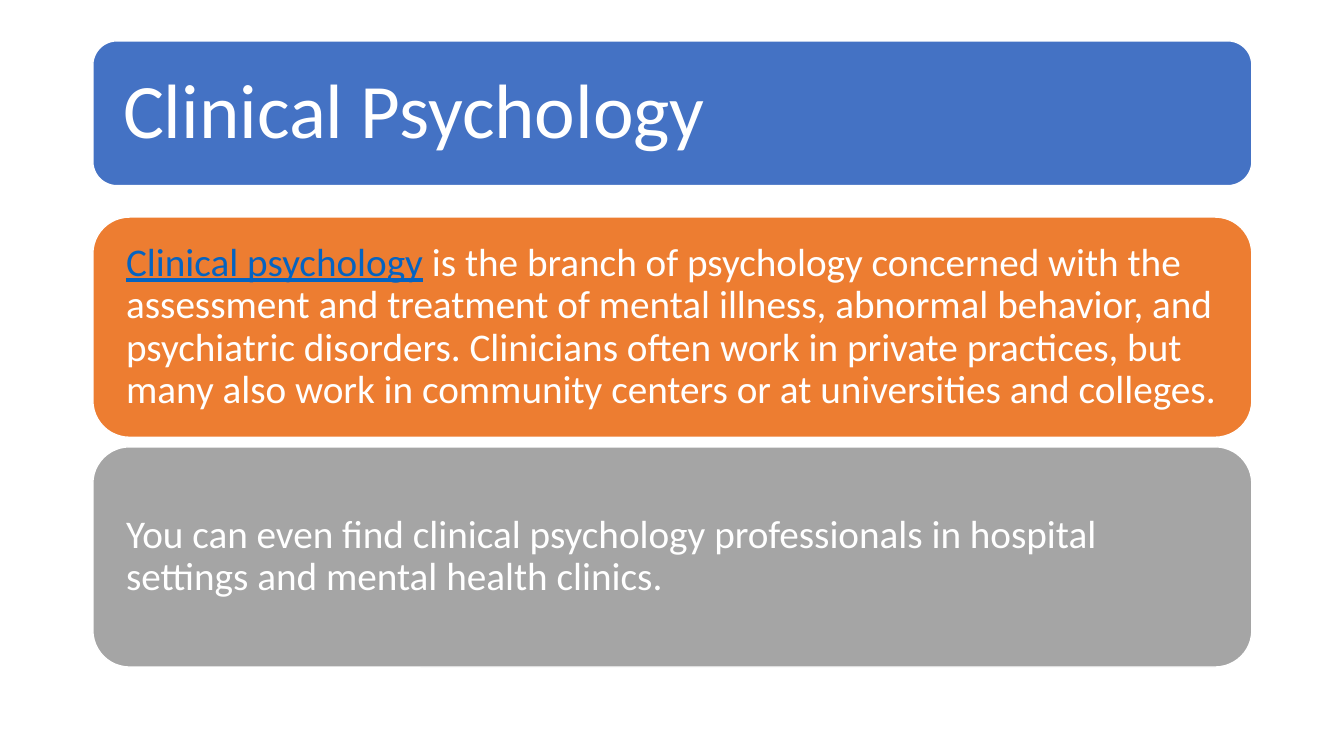
from pptx import Presentation
from pptx.dml.color import RGBColor
from pptx.enum.shapes import MSO_SHAPE
from pptx.enum.text import MSO_ANCHOR, MSO_AUTO_SIZE, PP_ALIGN
from pptx.util import Cm, Pt

ROUNDED = MSO_SHAPE.ROUNDED_RECTANGLE
MIDDLE = MSO_ANCHOR.MIDDLE
LEFT = PP_ALIGN.LEFT
NO_FIT = MSO_AUTO_SIZE.NONE

FONT = "Calibri"
WHITE = "FFFFFF"
LINK = "0563C1"
TITLE = "Clinical Psychology"
TITLE_FILL = "4472C4"
CARDS = [
    ("ED7D31", [
        ("Clinical psychology", LINK),
        (" is the branch of psychology concerned with the assessment and "
         "treatment of mental illness, abnormal behavior, and psychiatric "
         "disorders. Clinicians often work in private practices, but many also "
         "work in community centers or at universities and colleges.", WHITE),
    ]),
    ("A5A5A5", [
        ("You can even find clinical psychology professionals in hospital "
         "settings and mental health clinics.", WHITE),
    ]),
]

SIDE, WIDTH = 2.34, 29.21
TITLE_TOP, TITLE_HEIGHT = 1.03, 3.65
CARDS_TOP, CARD_HEIGHT, CARD_GAP = 5.47, 5.55, 0.24


def color(value):
    return RGBColor.from_string(value)


def add_panel(page, top, height, fill):
    box = page.shapes.add_shape(ROUNDED, Cm(SIDE), Cm(top), Cm(WIDTH), Cm(height))
    box.shadow.inherit = False
    box.fill.solid()
    box.fill.fore_color.rgb = color(fill)
    box.line.color.rgb = color(WHITE)
    box.line.width = Pt(1)
    return box


def write(box, spans, size, inset):
    frame = box.text_frame
    frame.word_wrap = True
    frame.auto_size = NO_FIT
    frame.vertical_anchor = MIDDLE
    frame.margin_left = frame.margin_right = Cm(inset)
    frame.margin_top = frame.margin_bottom = Cm(inset)
    para = frame.paragraphs[0]
    para.alignment = LEFT
    para.line_spacing = 0.9
    for text, tint in spans:
        span = para.add_run()
        span.text = text
        span.font.name = FONT
        span.font.size = Pt(size)
        span.font.color.rgb = color(tint)
        span.font.underline = tint == LINK


def main():
    deck = Presentation()
    deck.slide_width, deck.slide_height = Cm(33.87), Cm(19.05)
    page = deck.slides.add_slide(deck.slide_layouts[5])

    banner = add_panel(page, TITLE_TOP, TITLE_HEIGHT, TITLE_FILL)
    title = page.shapes.title
    title.left, title.top = banner.left, banner.top
    title.width, title.height = banner.width, banner.height
    write(title, [(TITLE, WHITE)], 55, 0.76)
    banner._element.addnext(title._element)

    for index, (fill, spans) in enumerate(CARDS):
        top = CARDS_TOP + index * (CARD_HEIGHT + CARD_GAP)
        card = add_panel(page, top, CARD_HEIGHT, fill)
        write(card, spans, 28, 0.57)

    deck.save("out.pptx")


if __name__ == "__main__":
    main()
